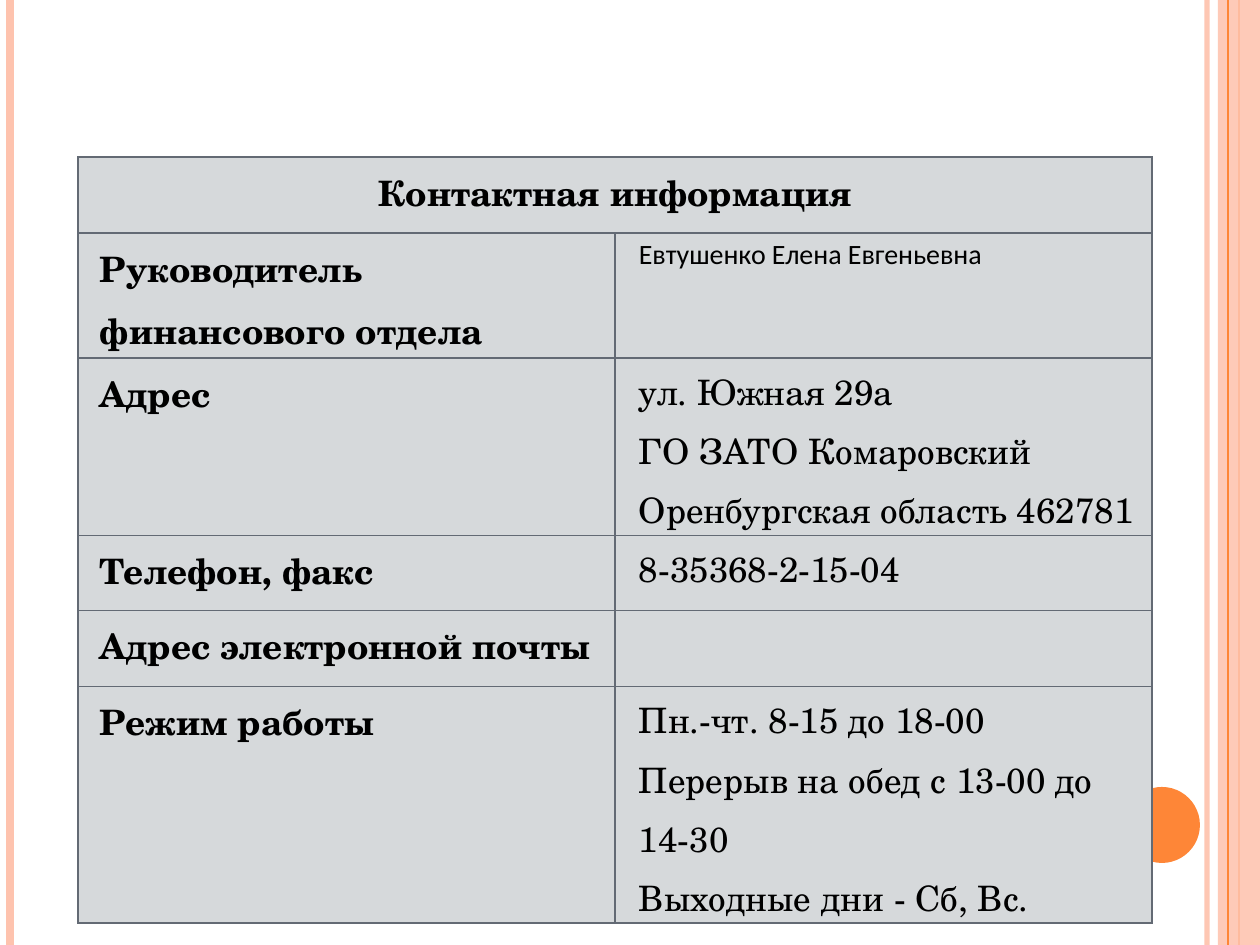
from typing import NamedTuple

from lxml import etree
from pptx import Presentation
from pptx.dml.color import RGBColor
from pptx.enum import shapes, text
from pptx.oxml import ns
from pptx.util import Pt

SCALE = 914400 / 126
WIDE, HIGH = 1260, 945
PINK, ORANGE, GREY, EDGE = "FEC3AE", "FE8637", "D6D9DB", "636A74"
SERIF, SANS = "TeX Gyre Schola", "Calibri"


class Stripe(NamedTuple):
    x: int
    color: str
    width: float
    alpha: int = 100


class Row(NamedTuple):
    high: int
    label: str
    lines: tuple[str, ...] = ()
    font: str = SERIF
    size: int = 20


BACK = [Stripe(1207, PINK, 3, 93), Stripe(10, PINK, 4.5), Stripe(1239, ORANGE, 1.5)]
FRONT = [Stripe(1228, ORANGE, 0.75)]
ROWS = [
    Row(76, "Контактная информация"),
    Row(125, "Руководитель финансового отдела",
        ("Евтушенко Елена Евгеньевна",), SANS, 16),
    Row(177, "Адрес", ("ул. Южная 29а", "ГО ЗАТО Комаровский",
                       "Оренбургская область 462781")),
    Row(75, "Телефон, факс", ("8-35368-2-15-04",)),
    Row(76, "Адрес электронной почты"),
    Row(236, "Режим работы", ("Пн.-чт. 8-15 до 18-00",
                              "Перерыв на обед с 13-00 до 14-30",
                              "Выходные дни - Сб, Вс.")),
]


def px(n: int) -> int:
    return round(n * SCALE)


def rgb(code: str) -> RGBColor:
    return RGBColor.from_string(code)


def fade(node, alpha: int) -> None:
    """Make every solid colour below node partly transparent."""
    if alpha < 100:
        for clr in node.iter(ns.qn("a:srgbClr")):
            etree.SubElement(clr, ns.qn("a:alpha")).set("val", str(alpha * 1000))


def draw_stripe(slide, stripe: Stripe) -> None:
    line = slide.shapes.add_connector(
        shapes.MSO_CONNECTOR.STRAIGHT, px(stripe.x), 0, px(stripe.x), px(HIGH))
    line.line.color.rgb = rgb(stripe.color)
    line.line.width = Pt(stripe.width)
    props = line._element.spPr
    fade(props, stripe.alpha)
    etree.SubElement(props, ns.qn("a:effectLst"))


def draw_shape(slide, kind, box: tuple[int, ...], color: str, alpha: int = 100) -> None:
    shape = slide.shapes.add_shape(kind, *map(px, box))
    shape.shadow.inherit = False
    shape.fill.solid()
    shape.fill.fore_color.rgb = rgb(color)
    shape.line.fill.background()
    fade(shape._element.spPr, alpha)


def write(cell, lines: tuple[str, ...], *, font: str = SERIF, size: int = 20,
          bold: bool = False, indent: int = 0, center: bool = False) -> None:
    frame = cell.text_frame
    for i, line in enumerate(lines):
        para = frame.add_paragraph() if i else frame.paragraphs[0]
        para.line_spacing = 1.15
        para.alignment = text.PP_ALIGN.CENTER if center else text.PP_ALIGN.LEFT
        para._p.get_or_add_pPr().set("marL", str(px(indent)))
        run = para.add_run()
        run.text = line
        run.font.name, run.font.size, run.font.bold = font, Pt(size), bold
        run.font.color.rgb = rgb("000000")


def style(cell) -> None:
    """Set the margins, borders and fill of a cell."""
    cell.margin_left = cell.margin_right = px(9)
    cell.margin_top = cell.margin_bottom = 0
    props = cell._tc.get_or_add_tcPr()
    for side in ("lnL", "lnR", "lnT", "lnB"):
        line = etree.SubElement(props, ns.qn(f"a:{side}"), w=str(Pt(1)))
        fill = etree.SubElement(line, ns.qn("a:solidFill"))
        etree.SubElement(fill, ns.qn("a:srgbClr"), val=EDGE)
    cell.fill.solid()
    cell.fill.fore_color.rgb = rgb(GREY)


def draw_table(slide, rows: list[Row], left: int, top: int, wide: int) -> None:
    high = sum(row.high for row in rows)
    table = slide.shapes.add_table(
        len(rows), 2, px(left), px(top), px(2 * wide), px(high)).table
    for col in table.columns:
        col.width = px(wide)
    for i, row in enumerate(rows):
        table.rows[i].height = px(row.high)
        label, value = table.cell(i, 0), table.cell(i, 1)
        style(label)
        style(value)
        head = i == 0
        write(label, (row.label,), bold=True, indent=0 if head else 13, center=head)
        write(value, row.lines, font=row.font, size=row.size, indent=15)
    table.cell(0, 0).merge(table.cell(0, 1))


def main() -> None:
    deck = Presentation()
    deck.slide_width, deck.slide_height = px(WIDE), px(HIGH)
    slide = deck.slides.add_slide(deck.slide_layouts[6])
    for stripe in BACK:
        draw_stripe(slide, stripe)
    kinds = shapes.MSO_SHAPE
    draw_shape(slide, kinds.RECTANGLE, (1218, 0, 42, HIGH), PINK, 87)
    for stripe in FRONT:
        draw_stripe(slide, stripe)
    draw_shape(slide, kinds.OVAL, (1124, 787, 76, 76), ORANGE)
    draw_table(slide, ROWS, 78, 157, 537)
    deck.save("out.pptx")


if __name__ == "__main__":
    main()
